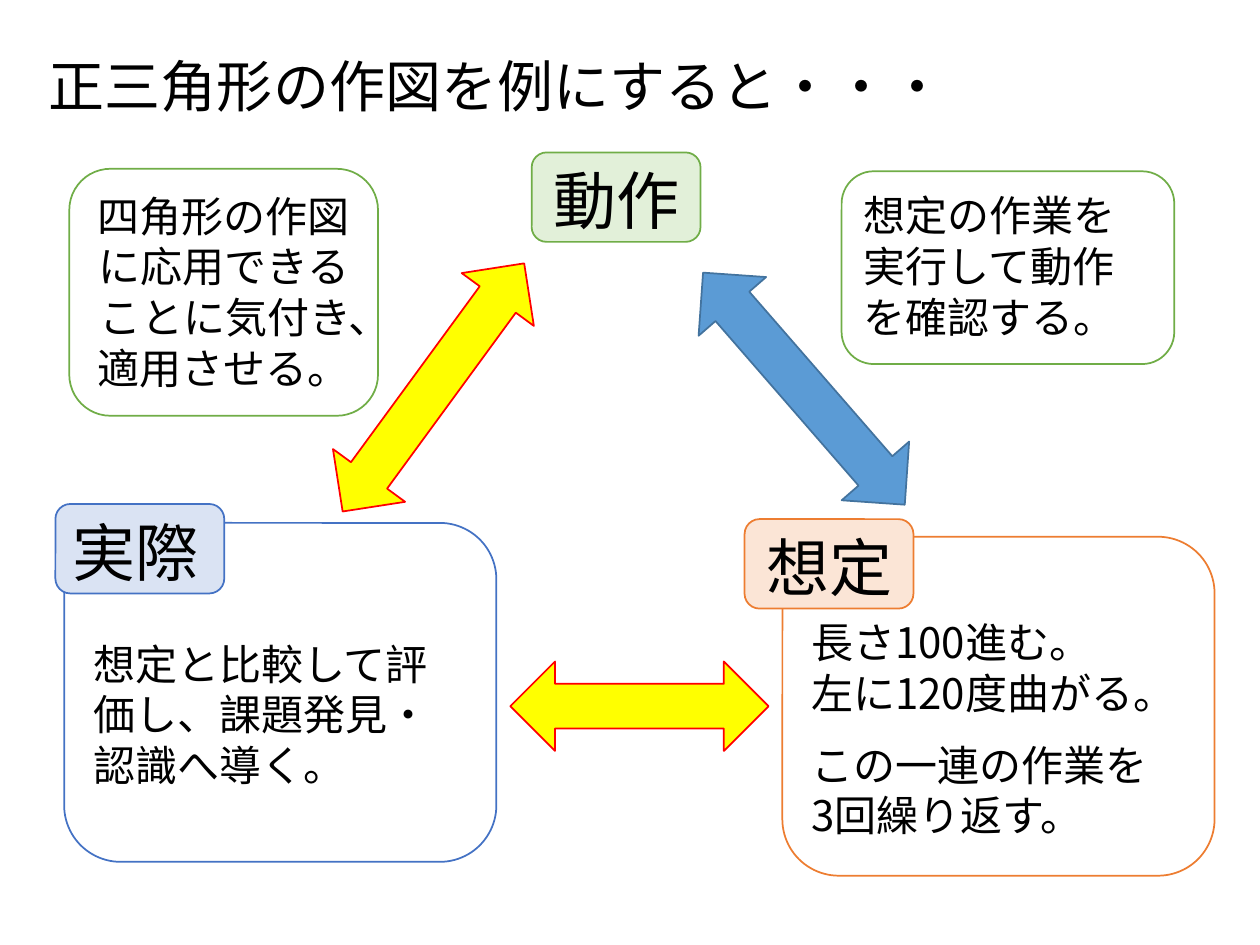
"""Build a slide on action, plan and result, using an equilateral triangle as the example."""
from pptx import Presentation
from pptx.dml.color import RGBColor
from pptx.enum.shapes import MSO_SHAPE as Shape
from pptx.enum.text import MSO_ANCHOR as Anchor, PP_ALIGN as Align
from pptx.oxml.ns import qn
from pptx.util import Inches, Pt

THEME = dict(
    font="Noto Sans CJK JP", text="000000",
    title=32, label=36, body=24, leading=Pt(29), outline=1,
    green="70AD47", pale_green="E2F0D9",
    orange="ED7D31", pale_orange="FBE5D6",
    blue="4472C4", pale_blue="DAE3F3",
    sky="5B9BD5", deep_sky="43739E",
    yellow="FFFF00", red="FF0000",
)

deck = Presentation()
deck.slide_width, deck.slide_height = Inches(10), Inches(7.5)
COLUMN, ROW = deck.slide_width / 100, deck.slide_height / 75
slide = deck.slides.add_slide(deck.slide_layouts[6])


def place(kind, column, row, columns, rows, fill, line):
    shape = slide.shapes.add_shape(
        kind, round(column * COLUMN), round(row * ROW),
        round(columns * COLUMN), round(rows * ROW))
    shape.shadow.inherit = False
    if fill:
        shape.fill.solid()
        shape.fill.fore_color.rgb = RGBColor.from_string(THEME[fill])
    else:
        shape.fill.background()
    shape.line.color.rgb = RGBColor.from_string(THEME[line])
    shape.line.width = Pt(THEME["outline"])
    return shape


def write(shape, paragraphs, size, align, spacing, **frame_format):
    frame = shape.text_frame
    for key, value in dict(word_wrap=True, **frame_format).items():
        setattr(frame, key, value)
    for index, (text, before) in enumerate(paragraphs):
        paragraph = frame.add_paragraph() if index else frame.paragraphs[0]
        paragraph.text = text
        for key, value in dict(alignment=align, line_spacing=spacing,
                               space_before=Pt(before)).items():
            setattr(paragraph, key, value)
        for run in paragraph.runs:
            for key, value in dict(name=THEME["font"], size=Pt(THEME[size])).items():
                setattr(run.font, key, value)
            run.font.color.rgb = RGBColor.from_string(THEME["text"])
            east_asian = run.font._element.makeelement(
                qn("a:ea"), {"typeface": THEME["font"]})
            run.font._element.find(qn("a:latin")).addnext(east_asian)


arrows = [
    (51.6, 27.3, 24.4, 49, "sky", "deep_sky"),
    (22.2, 27.2, 24.4, 306.2, "yellow", "red"),
    (40.5, 52.5, 20.5, 0, "yellow", "red"),
]
for column, row, length, angle, fill, line in arrows:
    arrow = place(Shape.LEFT_RIGHT_ARROW, column, row, length, 7.1, fill, line)
    arrow.rotation = angle

cards = [
    (66.8, 13.6, 26.4, 15.3, "green", Align.LEFT, Anchor.TOP, 0.07,
     [("想定の作業を実行して動作を確認する。", 0)]),
    (62.1, 42.6, 34.3, 26.9, "orange", Align.LEFT, Anchor.TOP, 0.5,
     [("長さ100進む。", 0), ("左に120度曲がる。", 0),
      ("この一連の作業を\v3回繰り返す。", 12)]),
    (5.1, 41.5, 34.3, 26.9, "blue", Align.LEFT, Anchor.MIDDLE, 0.39,
     [("想定と比較して評価し、課題発見・認識へ導く。", 0)]),
    (5.5, 13.4, 24.5, 19.6, "green", Align.CENTER, Anchor.TOP, 0.07,
     [("四角形の作図に応用できることに気付き、適用させる。", 0)]),
]
for column, row, columns, rows, line, align, anchor, inset, paragraphs in cards:
    card = place(Shape.ROUNDED_RECTANGLE, column, row, columns, rows, None, line)
    write(card, paragraphs, "body", align, THEME["leading"],
          vertical_anchor=anchor, margin_top=Inches(inset))

labels = [
    ("動作", 42.2, 12.1, "green", Align.CENTER),
    ("想定", 59.1, 41.2, "orange", Align.CENTER),
    ("実際", 4.4, 40, "blue", Align.LEFT),
]
for text, column, row, hue, align in labels:
    label = place(Shape.ROUNDED_RECTANGLE, column, row, 13.4, 7.1, "pale_" + hue, hue)
    write(label, [(text, 0)], "label", align, THEME["leading"],
          vertical_anchor=Anchor.MIDDLE, margin_top=Inches(0.28))

heading = slide.shapes.add_textbox(
    round(2.9 * COLUMN), round(4.2 * ROW), round(78.1 * COLUMN), round(6.8 * ROW))
write(heading, [("正三角形の作図を例にすると・・・", 0)], "title", Align.LEFT, 0.9)

deck.save("out.pptx")
